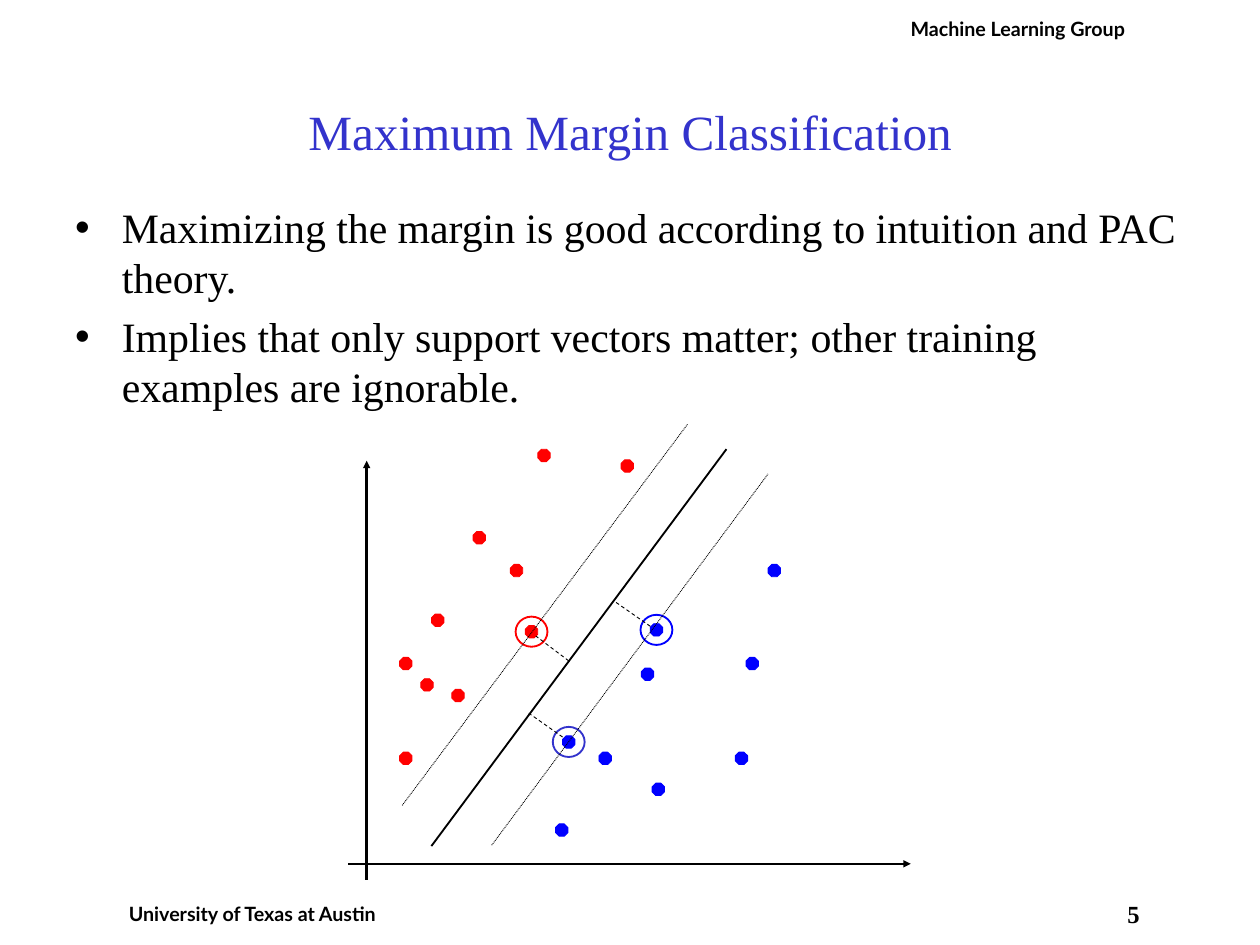
import dataclasses

import pptx
import pptx.dml.color
import pptx.enum.dml
import pptx.enum.shapes
import pptx.enum.text
import pptx.oxml.ns
import pptx.oxml.xmlchemy
import pptx.util

Pt = pptx.util.Pt
DASH = pptx.enum.dml.MSO_LINE
SHAPE = pptx.enum.shapes.MSO_SHAPE
ALIGN = pptx.enum.text.PP_ALIGN
ANCHOR = pptx.enum.text.MSO_ANCHOR


@dataclasses.dataclass(frozen=True)
class Theme:
    ink: str = "000000"
    paper: str = "FFFFFF"
    accent: str = "3333CC"
    red: str = "FF0000"
    blue: str = "0000FF"
    serif: str = "Times New Roman"
    sans: str = "Lato"
    title_size: float = 40
    list_size: float = 34
    number_size: float = 20
    banner_size: float = 16
    dot: float = 10
    ring: tuple = (25.9, 24.5)


def rgb(code):
    return pptx.dml.color.RGBColor.from_string(code)


def add_xml(parent, tag, **attributes):
    child = pptx.oxml.xmlchemy.OxmlElement(tag)
    for key, value in attributes.items():
        child.set(key, value)
    parent.append(child)


class SlideBuilder:
    def __init__(self, slide, theme):
        self.slide, self.theme = slide, theme

    def place(self, shape, box):
        shape.left, shape.top, shape.width, shape.height = map(Pt, box)

    def frame(self, shape, insets, anchor):
        frame = shape.text_frame
        frame.word_wrap = True
        frame.auto_size = pptx.enum.text.MSO_AUTO_SIZE.NONE
        frame.vertical_anchor = anchor
        frame.margin_left = frame.margin_right = Pt(insets[0])
        frame.margin_top = frame.margin_bottom = Pt(insets[1])
        return frame

    def run(self, paragraph, text, size, font, color, bold=False):
        run = paragraph.add_run()
        run.text = text
        run.font.size, run.font.name, run.font.bold = Pt(size), font, bold
        run.font.color.rgb = rgb(color)

    def title(self, text, box):
        heading = self.slide.shapes.title
        self.place(heading, box)
        paragraph = self.frame(heading, (10, 5), ANCHOR.MIDDLE).paragraphs[0]
        paragraph.alignment = ALIGN.CENTER
        self.run(paragraph, text, self.theme.title_size, self.theme.serif, self.theme.accent)

    def bullets(self, items, box, indent):
        body = self.slide.placeholders[1]
        self.place(body, box)
        frame = self.frame(body, (10, 5), ANCHOR.TOP)
        for index, item in enumerate(items):
            paragraph = frame.add_paragraph() if index else frame.paragraphs[0]
            paragraph.space_before = Pt(7)
            properties = paragraph._p.get_or_add_pPr()
            properties.set("marL", str(Pt(indent)))
            properties.set("indent", str(-Pt(indent)))
            add_xml(properties, "a:buChar", char="•")
            self.run(paragraph, item, self.theme.list_size, self.theme.serif, self.theme.ink)

    def label(self, text, box, size, font, inset):
        label = self.slide.shapes.add_textbox(*map(Pt, box))
        label.fill.solid()
        label.fill.fore_color.rgb = rgb(self.theme.paper)
        paragraph = self.frame(label, (inset, inset), ANCHOR.TOP).paragraphs[0]
        paragraph.alignment = ALIGN.CENTER
        self.run(paragraph, text, size, font, self.theme.ink, bold=True)

    def line(self, start, end, width, dash=None, arrow=False):
        line = self.slide.shapes.add_connector(
            pptx.enum.shapes.MSO_CONNECTOR.STRAIGHT, *map(Pt, start + end))
        line.line.width = Pt(width)
        line.line.color.rgb = rgb(self.theme.ink)
        if dash is not None:
            line.line.dash_style = dash
        properties = line._element.spPr
        if arrow:
            add_xml(properties.find(pptx.oxml.ns.qn("a:ln")), "a:tailEnd", type="triangle")
        add_xml(properties, "a:effectLst")

    def marker(self, kind, center, size, color, width, filled):
        left, top = (c - s / 2 for c, s in zip(center, size))
        marker = self.slide.shapes.add_shape(kind, *map(Pt, (left, top, *size)))
        marker.shadow.inherit = False
        if filled:
            marker.fill.solid()
            marker.fill.fore_color.rgb = rgb(color)
        else:
            marker.fill.background()
        marker.line.color.rgb = rgb(color)
        marker.line.width = Pt(width)

    def dot(self, center, color):
        self.marker(SHAPE.OCTAGON, center, (self.theme.dot,) * 2, color, 0.75, True)

    def ring(self, center, color):
        self.marker(SHAPE.OVAL, center, self.theme.ring, color, 1.5, False)


def main():
    theme = Theme()
    deck = pptx.Presentation()
    deck.slide_width, deck.slide_height = Pt(1024), Pt(768)
    page = SlideBuilder(deck.slides.add_slide(deck.slide_layouts[1]), theme)

    # Banner, footer and page number
    page.label("5", (904.3, 730.8, 33.8, 37.2), theme.number_size, theme.serif, 0)
    page.label("University of Texas at Austin", (85.7, 728, 239, 40),
               theme.banner_size, theme.sans, 5)
    page.label("Machine Learning Group", (725, 8.6, 204.5, 49),
               theme.banner_size, theme.sans, 5)

    # Title and claims
    page.title("Maximum Margin Classification", (77, 42.5, 870.5, 128))
    page.bullets([
        "Maximizing the margin is good according to intuition and PAC theory.",
        "Implies that only support vectors matter; other training examples are ignorable.",
    ], (51, 159, 921.6, 563), 38)

    # Axes
    page.line((298, 715), (298, 374.4), 2, arrow=True)
    page.line((283, 702), (740.2, 702), 2, arrow=True)

    # Training examples of the two classes
    red_support = (432, 513.4)
    low_blue_support, high_blue_support = (462.2, 603), (533.5, 511.9)
    examples = {
        theme.red: [red_support, (419.8, 463.7), (355.7, 504), (372.2, 565.2),
                    (329.8, 616.3), (389.5, 437), (329.8, 539.3), (347, 556.6),
                    (442.1, 370.1), (509.8, 378.7)],
        theme.blue: [low_blue_support, high_blue_support, (491.8, 616.3),
                     (602.6, 616.3), (456.5, 674.6), (526.3, 547.9),
                     (535, 641.5), (611.3, 539.3), (629.3, 463.7)],
    }
    for color, centers in examples.items():
        for center in centers:
            page.dot(center, color)

    # Separating line, with the support vectors circled
    page.line((350.6, 687.6), (590.4, 365), 1.5)
    page.ring(red_support, theme.red)
    page.ring(low_blue_support, theme.accent)
    page.ring(high_blue_support, theme.blue)

    # Distances from the support vectors to the separating line
    for start, end in [((528.5, 509), (499.7, 488.9)),
                       ((457.2, 599), (429.8, 579.6)),
                       ((462.2, 537.1), (435.6, 517))]:
        page.line(start, end, 0.75, DASH.DASH)

    # Margin edges
    page.line((399.6, 686.9), (624.2, 385.2), 0.75, DASH.ROUND_DOT)
    page.line((326.9, 654.5), (558.7, 344.9), 0.75, DASH.ROUND_DOT)

    deck.save("out.pptx")


if __name__ == "__main__":
    main()
